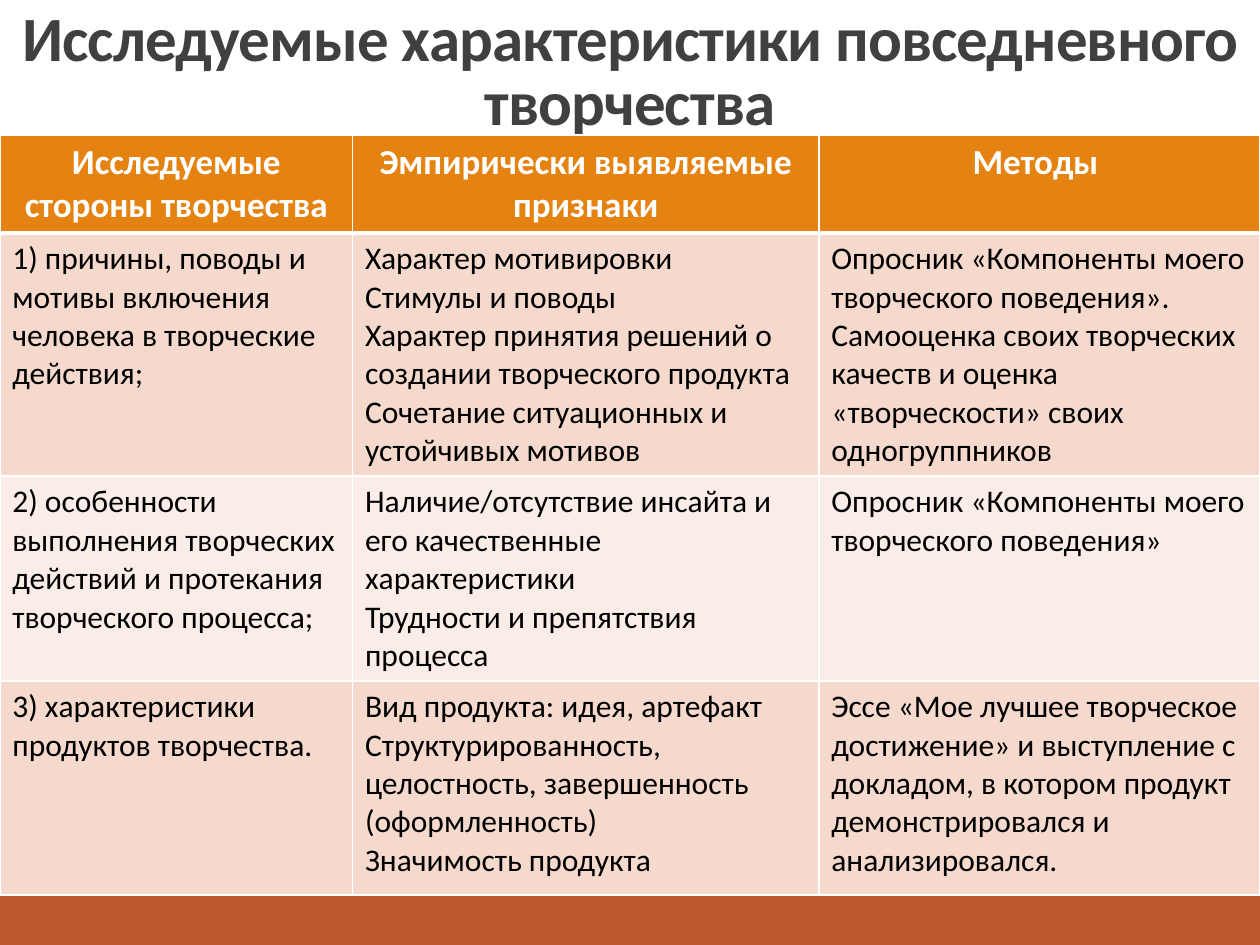
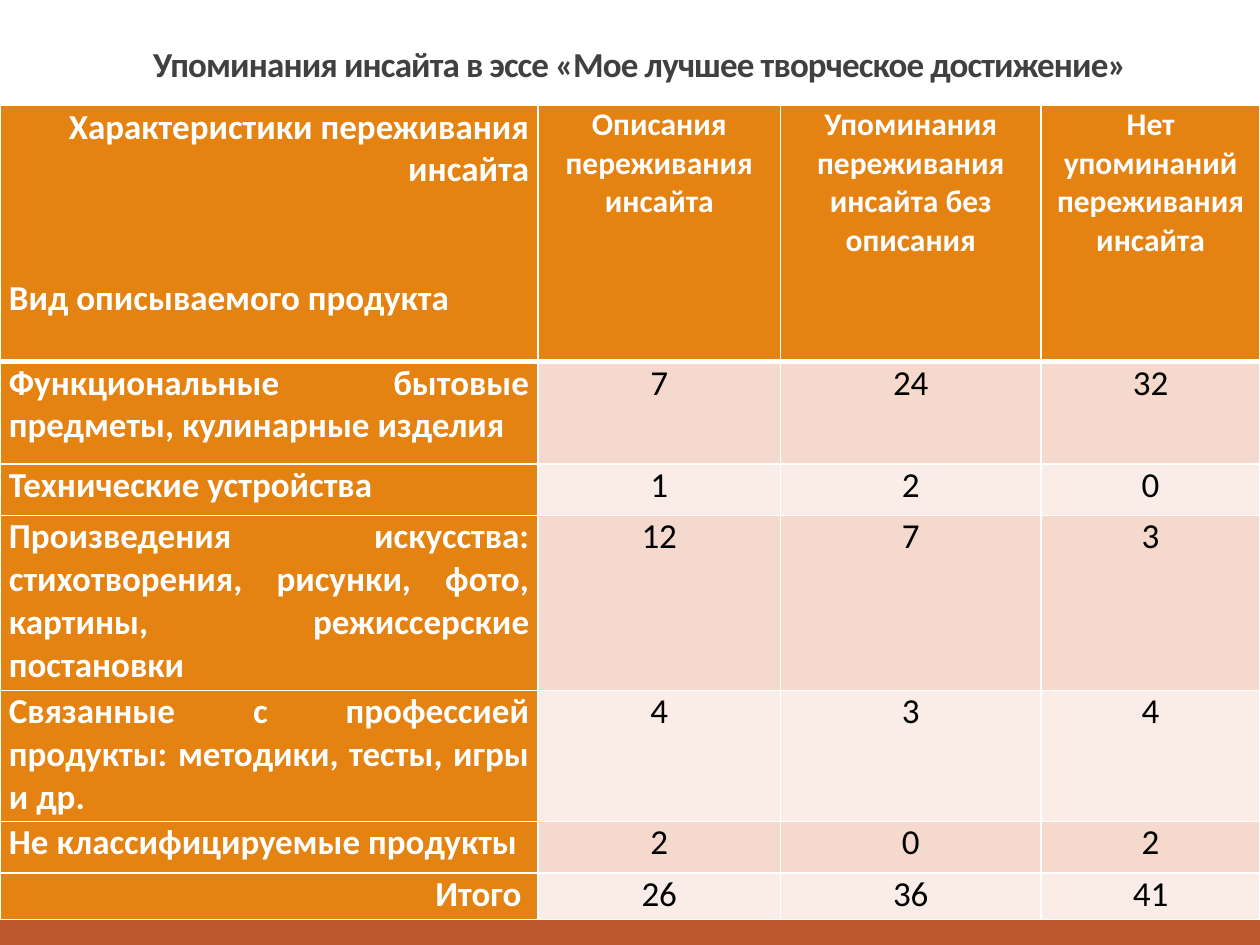
from dataclasses import dataclass

import pptx
import pptx.dml.color
import pptx.enum.shapes
import pptx.enum.text
import pptx.oxml
import pptx.oxml.ns
import pptx.util
from pptx.util import Cm

Align = pptx.enum.text.PP_ALIGN


@dataclass(frozen=True)
class Theme:
    font: str = "Calibri"
    title: str = "404040"
    light: str = "FFFFFF"
    dark: str = "000000"
    accent: str = "E48312"
    footer: str = "BD582C"
    bands: tuple[str, str] = ("F5D9CC", "FAEDE7")
    large: int = 36
    medium: int = 20
    small: int = 18
    thin: float = 1
    thick: float = 3


THEME = Theme()


@dataclass(frozen=True)
class Para:
    text: str
    align: Align = Align.LEFT
    before: float = 0


@dataclass(frozen=True)
class Cell:
    paras: list[Para]
    size: int
    fill: str
    color: str = THEME.dark
    bold: bool = False


@dataclass(frozen=True)
class Title:
    text: str
    left: float
    width: float
    height: float
    size: int


@dataclass(frozen=True)
class Grid:
    top: float
    cols: list[float]
    rows: list[float]
    cells: list[list[Cell]]
    margin_x: float
    margin_y: float


def rgb(color: str) -> pptx.dml.color.RGBColor:
    return pptx.dml.color.RGBColor.from_string(color)


def add_run(p, text: str, size: int, color: str, bold: bool):
    r = p.add_run()
    r.text = text
    r.font.name = THEME.font
    r.font.size = pptx.util.Pt(size)
    r.font.bold = bold
    r.font.color.rgb = rgb(color)
    return r


def add_title(slide, title: Title) -> None:
    sp = slide.shapes.add_textbox(Cm(title.left), Cm(0.53), Cm(title.width), Cm(title.height))
    tf = sp.text_frame
    tf.word_wrap = True
    tf.vertical_anchor = pptx.enum.text.MSO_ANCHOR.BOTTOM
    p = tf.paragraphs[0]
    p.alignment = Align.CENTER
    p.line_spacing = 0.85
    r = add_run(p, title.text, title.size, THEME.title, True)
    r.font._element.set("spc", "-50")


def add_footer(slide) -> None:
    sp = slide.shapes.add_shape(
        pptx.enum.shapes.MSO_SHAPE.RECTANGLE, Cm(0), Cm(17.78), Cm(25.4), Cm(1.27)
    )
    sp.shadow.inherit = False
    sp.fill.solid()
    sp.fill.fore_color.rgb = rgb(THEME.footer)
    sp.line.fill.background()


def set_borders(cell, widths: dict[str, float]) -> None:
    tc_pr = cell._tc.get_or_add_tcPr()
    for i, (side, width) in enumerate(widths.items()):
        ln = pptx.oxml.parse_xml(
            f'<a:ln{side} {pptx.oxml.ns.nsdecls("a")} w="{pptx.util.Pt(width)}">'
            f'<a:solidFill><a:srgbClr val="{THEME.light}"/></a:solidFill></a:ln{side}>'
        )
        tc_pr.insert(i, ln)


def fill_cell(cell, content: Cell, grid: Grid) -> None:
    cell.margin_left = cell.margin_right = Cm(grid.margin_x)
    cell.margin_top = cell.margin_bottom = Cm(grid.margin_y)
    cell.fill.solid()
    cell.fill.fore_color.rgb = rgb(content.fill)
    tf = cell.text_frame
    for i, para in enumerate(content.paras):
        p = tf.add_paragraph() if i else tf.paragraphs[0]
        p.alignment = para.align
        if para.before:
            p.space_before = pptx.util.Pt(para.before)
        add_run(p, para.text, content.size, content.color, content.bold)


def add_grid(slide, grid: Grid) -> None:
    frame = slide.shapes.add_table(
        len(grid.rows), len(grid.cols), Cm(0), Cm(grid.top), Cm(sum(grid.cols)), Cm(sum(grid.rows))
    )
    table = frame.table
    table.horz_banding = False
    for column, width in zip(table.columns, grid.cols):
        column.width = Cm(width)
    for i, (row, height) in enumerate(zip(table.rows, grid.rows)):
        row.height = Cm(height)
        for cell, content in zip(row.cells, grid.cells[i]):
            fill_cell(cell, content, grid)
            set_borders(cell, {
                "L": THEME.thin,
                "R": THEME.thin,
                "T": THEME.thick if i == 1 else THEME.thin,
                "B": THEME.thick if i == 0 else THEME.thin,
            })


def accent_cell(paras: list[Para], size: int = THEME.medium) -> Cell:
    return Cell(paras, size, THEME.accent, THEME.light, True)


def header_cell(text: str, size: int = THEME.medium) -> Cell:
    return accent_cell([Para(text, Align.CENTER)], size)


def body_cell(row: int, texts: list[str], size: int, align: Align = Align.LEFT) -> Cell:
    return Cell([Para(text, align) for text in texts], size, THEME.bands[row % 2])


def traits_grid() -> Grid:
    headers = ["Исследуемые стороны творчества", "Эмпирически выявляемые признаки", "Методы "]
    traits = [
        (
            ["1) причины, поводы и мотивы включения человека в творческие действия;"],
            [
                "Характер мотивировки",
                "Стимулы и поводы",
                "Характер принятия решений о создании творческого продукта",
                "Сочетание ситуационных и устойчивых мотивов",
            ],
            ["Опросник «Компоненты моего творческого поведения». Самооценка своих творческих "
             "качеств и оценка «творческости» своих одногруппников"],
        ),
        (
            ["2) особенности выполнения творческих действий и протекания творческого процесса;"],
            [
                "Наличие/отсутствие инсайта и его качественные характеристики",
                "Трудности и препятствия процесса",
            ],
            ["Опросник «Компоненты моего творческого поведения»"],
        ),
        (
            ["3) характеристики продуктов творчества."],
            [
                "Вид продукта: идея, артефакт",
                "Структурированность, целостность, завершенность (оформленность)",
                "Значимость продукта",
            ],
            ["Эссе «Мое лучшее творческое достижение» и выступление с докладом, "
             "в котором продукт демонстрировался и анализировался."],
        ),
    ]
    cells = [[header_cell(text) for text in headers]]
    for i, row in enumerate(traits):
        cells.append([body_cell(i, texts, THEME.small) for texts in row])
    return Grid(2.72, [7.11, 9.4, 8.89], [1.98, 4.9, 4.13, 4.31], cells, 0.25, 0.13)


def insight_grid() -> Grid:
    corner = accent_cell([
        Para("Характеристики переживания инсайта", Align.RIGHT),
        Para("Вид описываемого продукта", before=49),
    ])
    headers = [
        "Описания переживания инсайта",
        "Упоминания переживания инсайта без описания",
        "Нет упоминаний переживания инсайта",
    ]
    counts = [
        ("Функциональные бытовые предметы, кулинарные изделия", Align.JUSTIFY, (7, 24, 32)),
        ("Технические устройства", Align.JUSTIFY, (1, 2, 0)),
        ("Произведения искусства: стихотворения, рисунки, фото, картины, режиссерские постановки",
         Align.JUSTIFY, (12, 7, 3)),
        ("Связанные с профессией продукты: методики, тесты, игры и др.", Align.JUSTIFY, (4, 3, 4)),
        ("Не классифицируемые продукты ", Align.JUSTIFY, (2, 0, 2)),
        ("Итого ", Align.RIGHT, (26, 36, 41)),
    ]
    cells = [[corner] + [header_cell(text, THEME.small) for text in headers]]
    for i, (product, align, values) in enumerate(counts):
        numbers = [body_cell(i, [str(v)], THEME.medium, Align.CENTER) for v in values]
        cells.append([accent_cell([Para(product, align)])] + numbers)
    heights = [5.16, 2.06, 1.04, 3.53, 2.64, 1.04, 0.94]
    return Grid(2.13, [10.85, 4.88, 5.26, 4.41], heights, cells, 0.18, 0)


def main() -> None:
    prs = pptx.Presentation()
    prs.slide_width, prs.slide_height = Cm(25.4), Cm(19.05)
    pages = [
        (Title("Исследуемые характеристики повседневного творчества",
               0, 25.4, 2.39, THEME.large), traits_grid()),
        (Title("Упоминания инсайта в эссе «Мое лучшее творческое достижение» ",
               1.09, 23.75, 1.3, THEME.medium), insight_grid()),
    ]
    for title, grid in pages:
        slide = prs.slides.add_slide(prs.slide_layouts[6])
        add_footer(slide)
        add_title(slide, title)
        add_grid(slide, grid)
    prs.save("out.pptx")


if __name__ == "__main__":
    main()
